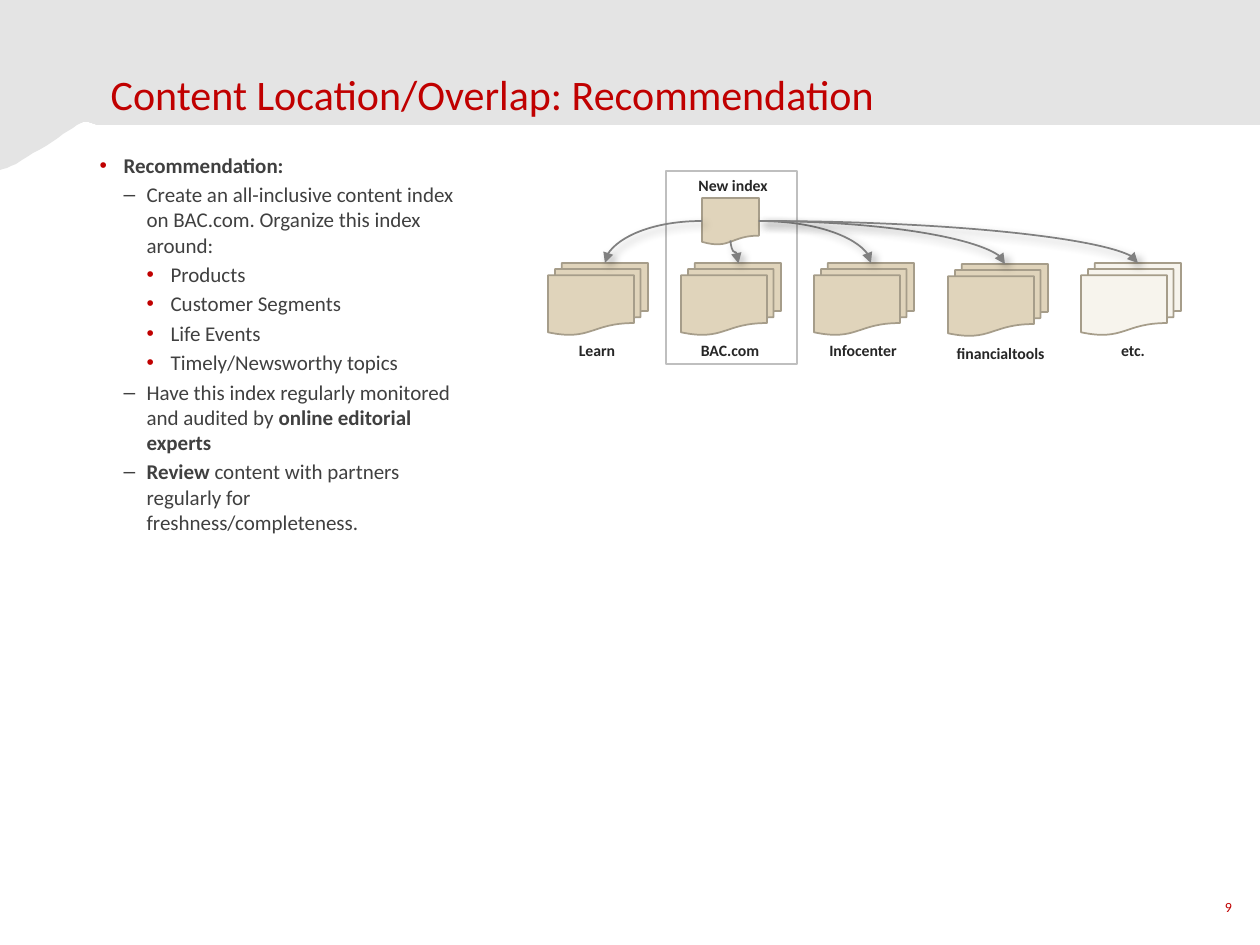
from lxml import etree
from pptx import Presentation
from pptx import util as u
from pptx.dml.color import RGBColor
from pptx.enum import shapes, text
from pptx.oxml import ns, parse_xml

SCALE = 914400 / 126  # EMU in one px
COLORS = {"red": "C00000", "body": "404040", "label": "262626", "band": "E4E4E4",
          "paper": "E0D4BB", "edge": "A69D8A", "frame": "BFBFBF", "arrow": "808080"}
SHADOW = (f'<a:effectLst {ns.nsdecls("a")}><a:outerShdw blurRad="63500" dist="38100" '
          'dir="2700000" rotWithShape="0"><a:srgbClr val="000000"><a:alpha val="35000"/>'
          '</a:srgbClr></a:outerShdw></a:effectLst>')


def px(*values):
    return [u.Emu(round(v * SCALE)) for v in values]


def rgb(name):
    return RGBColor.from_string(COLORS[name])


def add_text(p, content, size=12, color="body", bold=False):
    r = p.add_run()
    r.text = content
    r.font.name, r.font.size, r.font.bold = "Calibri", u.Pt(size), bold
    r.font.color.rgb = rgb(color)
    return r


def bezier(p0, p1, p2, p3, steps=16):
    """Points along a cubic curve, without its start."""
    for i in range(1, steps + 1):
        t = i / steps
        s = 1 - t
        yield tuple(s**3 * a + 3 * s * s * t * b + 3 * s * t * t * c + t**3 * d
                    for a, b, c, d in zip(p0, p1, p2, p3))


class Deck:
    # level: left margin, indent, bullet, bullet colour
    LEVELS = [(24, -24, "•", "red"), (47, -23, "–", "body"), (71, -24, "•", "red")]

    def __init__(self, prs):
        self.slide = prs.slides.add_slide(prs.slide_layouts[1])
        self.shapes = self.slide.shapes

    def place(self, sp, box):
        sp.left, sp.top, sp.width, sp.height = px(*box)

    def band(self, points):
        fb = self.shapes.build_freeform(*points[0], scale=SCALE)
        fb.add_line_segments(points[1:], close=True)
        sp = fb.convert_to_shape()
        self.style(sp, "band")
        self.shapes._spTree.insert(2, sp._element)  # behind the placeholders

    def style(self, sp, fill=None, line=None, alpha=None):
        sp.shadow.inherit = False
        if fill:
            sp.fill.solid()
            sp.fill.fore_color.rgb = rgb(fill)
        else:
            sp.fill.background()
        if alpha:
            clr = sp._element.spPr.find(".//" + ns.qn("a:srgbClr"))
            etree.SubElement(clr, ns.qn("a:alpha")).set("val", str(alpha * 1000))
        if line:
            sp.line.color.rgb, sp.line.width = rgb(line), u.Pt(1)
        else:
            sp.line.fill.background()

    def title(self, content, *box):
        sp = self.shapes.title
        self.place(sp, box)
        tf = sp.text_frame
        tf.auto_size, tf.vertical_anchor = text.MSO_AUTO_SIZE.NONE, text.MSO_ANCHOR.BOTTOM
        p = tf.paragraphs[0]
        p.alignment = text.PP_ALIGN.LEFT
        add_text(p, content, 24, "red")

    def bullets(self, items, *box):
        sp = self.slide.placeholders[1]
        self.place(sp, box)
        tf = sp.text_frame
        tf.auto_size = text.MSO_AUTO_SIZE.NONE
        for i, (level, *runs) in enumerate(items):
            p = tf.add_paragraph() if i else tf.paragraphs[0]
            p.level = level
            margin, indent, char, color = self.LEVELS[level]
            pPr = p._p.get_or_add_pPr()
            pPr.set("marL", str(px(margin)[0]))
            pPr.set("indent", str(px(indent)[0]))
            clr = etree.SubElement(pPr, ns.qn("a:buClr"))
            etree.SubElement(clr, ns.qn("a:srgbClr")).set("val", COLORS[color])
            etree.SubElement(pPr, ns.qn("a:buChar")).set("char", char)
            if i == 0:
                p.space_before = u.Pt(0)
            for content, bold in runs:
                add_text(p, content, bold=bold)

    def label(self, content, *box, anchor=text.MSO_ANCHOR.BOTTOM, **fmt):
        tf = self.shapes.add_textbox(*px(*box)).text_frame
        tf.word_wrap, tf.vertical_anchor = True, anchor
        p = tf.paragraphs[0]
        p.alignment = text.PP_ALIGN.CENTER
        add_text(p, content, **({"size": 9, "color": "label", "bold": True} | fmt))

    def shape(self, kind, *box, **look):
        self.style(self.shapes.add_shape(kind, *px(*box)), **look)

    def arrow(self, *ends, preset="curvedConnector2", rotation=0):
        c = self.shapes.add_connector(shapes.MSO_CONNECTOR.CURVE, *px(*ends))
        c.line.color.rgb, c.line.width = rgb("arrow"), u.Pt(1)
        spPr = c._element.spPr
        spPr.find(ns.qn("a:prstGeom")).set("prst", preset)
        if rotation:
            spPr.find(ns.qn("a:xfrm")).set("rot", str(rotation * 60000))
        etree.SubElement(spPr.find(ns.qn("a:ln")), ns.qn("a:tailEnd")).set("type", "triangle")
        spPr.append(parse_xml(SHADOW))


def main():
    prs = Presentation()
    prs.slide_width, prs.slide_height = px(1260, 945)
    deck = Deck(prs)
    kinds = shapes.MSO_SHAPE

    # Header band with its wave
    wave = [(96, 125), (91, 122), (86, 121), (81, 123), (64, 132), (14, 169), (0, 170)]
    deck.band([(0, 0), (1260, 0), (1260, 125), wave[0], *bezier(*wave[:4]), *bezier(*wave[3:])])
    deck.title("Content Location/Overlap: Recommendation", 98, 5, 1099, 120)
    deck.label("9", 1197, 882, 63, 50, anchor=text.MSO_ANCHOR.MIDDLE,
               size=8, color="red", bold=False)

    # Recommendation list
    topics = ["Products", "Customer Segments", "Life Events", "Timely/Newsworthy topics"]
    deck.bullets([
        (0, ("Recommendation:", True)),
        (1, ("Create an all-inclusive content index on BAC.com. "
             "Organize this index around:", False)),
        *[(2, (topic, False)) for topic in topics],
        (1, ("Have this index regularly monitored and audited by", False),
         (" online editorial experts", True)),
        (1, ("Review ", True),
         ("content with partners regularly for freshness/completeness.", False)),
    ], 87, 146, 388, 683)

    # Content sites: name, drop of documents, label shift, label drop, label width, opacity
    sites = [("Learn", 0, 0, 0, 98, None), ("BAC.com", 0, 0, 0, 98, None),
             ("Infocenter", 0, 0, 0, 98, None), ("financialtools", 1, -6, 3, 117, None),
             ("etc.", 0, 3, 0, 98, 25)]
    lefts = [548 + i * 400 // 3 for i in range(len(sites))]
    for x, (name, drop, shift, label_drop, width, alpha) in zip(lefts, sites):
        deck.shape(kinds.FLOWCHART_MULTIDOCUMENT, x, 263 + drop, 100, 72,
                   fill="paper", line="edge", alpha=alpha)
        deck.label(name, x + shift, 323 + label_drop, width, 43)

    # New index and the frame around its site
    deck.shape(kinds.FLOWCHART_DOCUMENT, 702, 198, 57, 47, fill="paper", line="edge")
    deck.shape(kinds.RECTANGLE, 666, 171, 131, 193, line="frame")
    deck.label("New index", 684, 158, 98, 43)

    # Arrows from the index to every site
    for i, x in enumerate(lefts):
        if i == 1:  # straight below: an S-curve turned to run downwards
            deck.arrow(746, 248, 723, 256, preset="curvedConnector3", rotation=270)
        else:
            deck.arrow(702 if i == 0 else 759, 221, x + 57, 263 + sites[i][1])

    prs.save("out.pptx")


if __name__ == "__main__":
    main()
